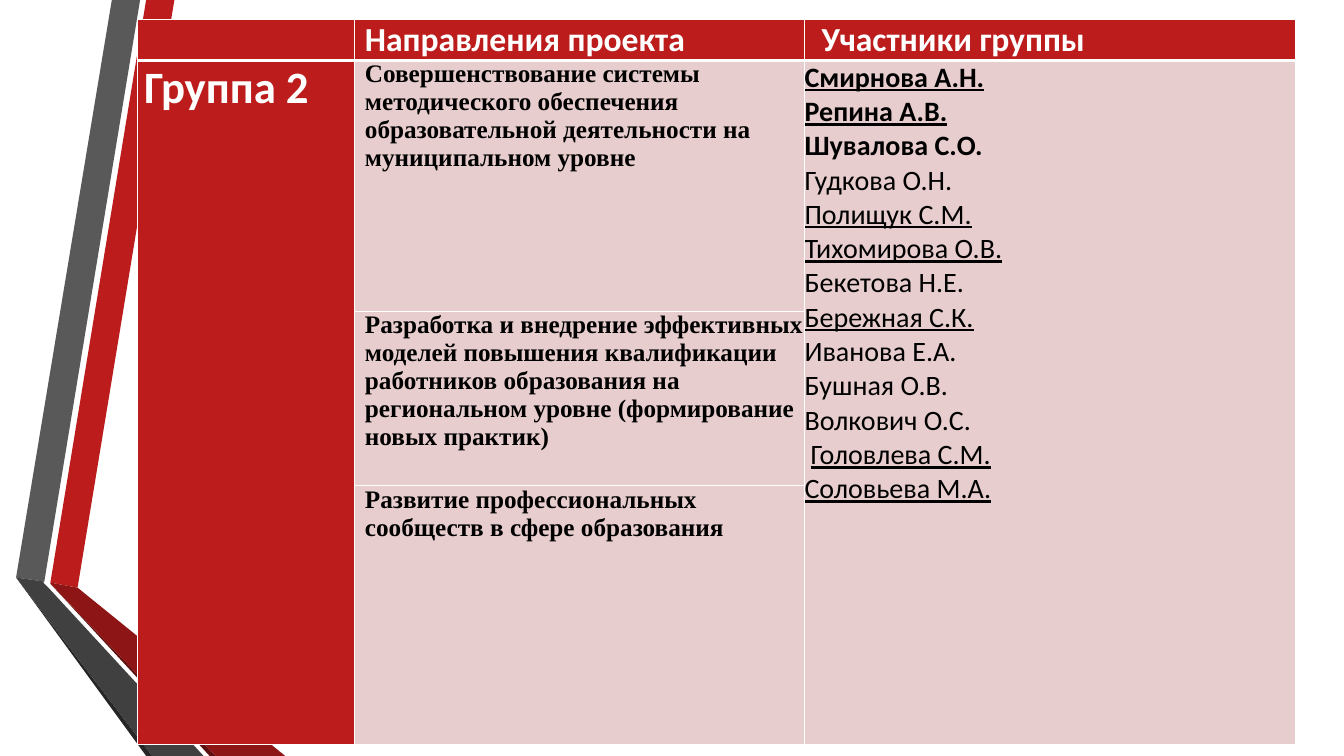
from lxml import etree
from pptx import Presentation
from pptx import util as u
from pptx.dml.color import RGBColor
from pptx.oxml import ns

COLUMNS, ROWS = 1333, 750  # grid of the slide
RED, PINK, WHITE, BLACK = "BC1C1C", "E7CDCD", "FFFFFF", "000000"
SANS, SERIF = "Calibri", "Times New Roman"


def colour(value):
    return RGBColor.from_string(value)


class SlideBuilder:
    """Holds the grid and the current slide."""

    def __init__(self, deck):
        self.step = u.Inches(0.01)
        deck.slide_width = COLUMNS * self.step
        deck.slide_height = ROWS * self.step
        self.slide = deck.slides.add_slide(deck.slide_layouts[6])

    def ribbon(self, fill, points):
        outline = self.slide.shapes.build_freeform(*points[0], scale=self.step)
        outline.add_line_segments(points[1:], close=True)
        band = outline.convert_to_shape()
        band.shadow.inherit = False
        band.fill.solid()
        band.fill.fore_color.rgb = colour(fill)
        band.line.fill.background()

    def table(self, left, top, widths, heights):
        frame = self.slide.shapes.add_table(
            len(heights), len(widths), left * self.step, top * self.step,
            sum(widths) * self.step, sum(heights) * self.step)
        grid = frame.table
        grid.first_row = grid.horz_banding = False
        for column, width in zip(grid.columns, widths):
            column.width = width * self.step
        for row, height in zip(grid.rows, heights):
            row.height = height * self.step
        return grid

    def cell(self, cell, fill, bottom=1, inset=0):
        cell.margin_left = cell.margin_right = inset * self.step
        cell.margin_top = cell.margin_bottom = 0
        properties = cell._tc.get_or_add_tcPr()
        for side, points in (("L", 1), ("R", 1), ("T", 1), ("B", bottom)):
            border = etree.SubElement(properties, ns.qn(f"a:ln{side}"), w=str(u.Pt(points)))
            paint = etree.SubElement(border, ns.qn("a:solidFill"))
            etree.SubElement(paint, ns.qn("a:srgbClr"), val=WHITE)
        cell.fill.solid()
        cell.fill.fore_color.rgb = colour(fill)

    def line(self, paragraph, words, size, font, ink, bold=True, underline=False, indent=0):
        paragraph.text = words
        properties = paragraph._p.get_or_add_pPr()
        properties.set("marL", str(indent * self.step))
        properties.set("indent", "0")
        style = paragraph.font
        style.size, style.name = u.Pt(size), font
        style.bold, style.underline = bold, underline
        style.color.rgb = colour(ink)


# Ribbons along the left edge
RIBBONS = [
    (RED, [(50, 578), (77, 583), (173, 0), (145, 0)]),
    ("595959", [(139, 0), (111, 0), (16, 573), (44, 577)]),
    ("262626", [(16, 573), (145, 750), (151, 750)]),
    ("5E0E0E", [(50, 579), (208, 750), (214, 750)]),
    ("8D1515", [(50, 579), (214, 750), (283, 750), (77, 583), (50, 578)]),
    ("404040", [(202, 750), (48, 583), (43, 578), (44, 577), (16, 573), (151, 750)]),
]

# Table wording: heading with its indent, then the project directions
HEADINGS = [("Направления проекта", 10), ("Участники группы", 17)]
DIRECTIONS = [
    "Совершенствование системы методического обеспечения "
    "образовательной деятельности на муниципальном уровне",
    "Разработка и внедрение эффективных моделей повышения квалификации работников "
    "образования на региональном уровне (формирование новых практик)",
    "Развитие профессиональных сообществ в сфере образования",
]

# Members: name, bold, underlined, indent
MEMBERS = [
    ("Смирнова А.Н.", True, True, 0),
    ("Репина А.В.", True, True, 0),
    ("Шувалова С.О.", True, False, 0),
    ("Гудкова О.Н.", False, False, 0),
    ("Полищук С.М.", False, True, 0),
    ("Тихомирова О.В.", False, True, 0),
    ("Бекетова Н.Е.", False, False, 0),
    ("Бережная С.К.", False, True, 0),
    ("Иванова Е.А.", False, False, 0),
    ("Бушная О.В.", False, False, 0),
    ("Волкович О.С.", False, False, 0),
    ("Головлева С.М.", False, True, 6),
    ("Соловьева М.А.", False, True, 0),
]


def main():
    deck = Presentation()
    builder = SlideBuilder(deck)
    for fill, points in RIBBONS:
        builder.ribbon(fill, points)

    # Table frame: red header and group column, pink body
    groups = builder.table(136, 19, [216, 446, 487], [41, 249, 173, 257])
    for row in range(4):
        for column in range(3):
            builder.cell(groups.cell(row, column),
                         RED if row == 0 or column == 0 else PINK,
                         bottom=3 if row == 0 else 1,
                         inset=7 if row and column == 0 else 0)
    for column in (0, 2):
        groups.cell(1, column).merge(groups.cell(3, column))

    # Header and group name
    for column, (heading, indent) in enumerate(HEADINGS, 1):
        builder.line(groups.cell(0, column).text_frame.paragraphs[0],
                     heading, 24, SANS, WHITE, indent=indent)
    builder.line(groups.cell(1, 0).text_frame.paragraphs[0], "Группа 2", 32, SANS, WHITE)

    # Directions and members
    for row, direction in enumerate(DIRECTIONS, 1):
        builder.line(groups.cell(row, 1).text_frame.paragraphs[0],
                     direction, 18, SERIF, BLACK, indent=10)
    members = groups.cell(1, 2).text_frame
    for number, (name, bold, underline, indent) in enumerate(MEMBERS):
        paragraph = members.add_paragraph() if number else members.paragraphs[0]
        builder.line(paragraph, name, 20, SANS, BLACK, bold, underline, indent)

    deck.save("out.pptx")


if __name__ == "__main__":
    main()
